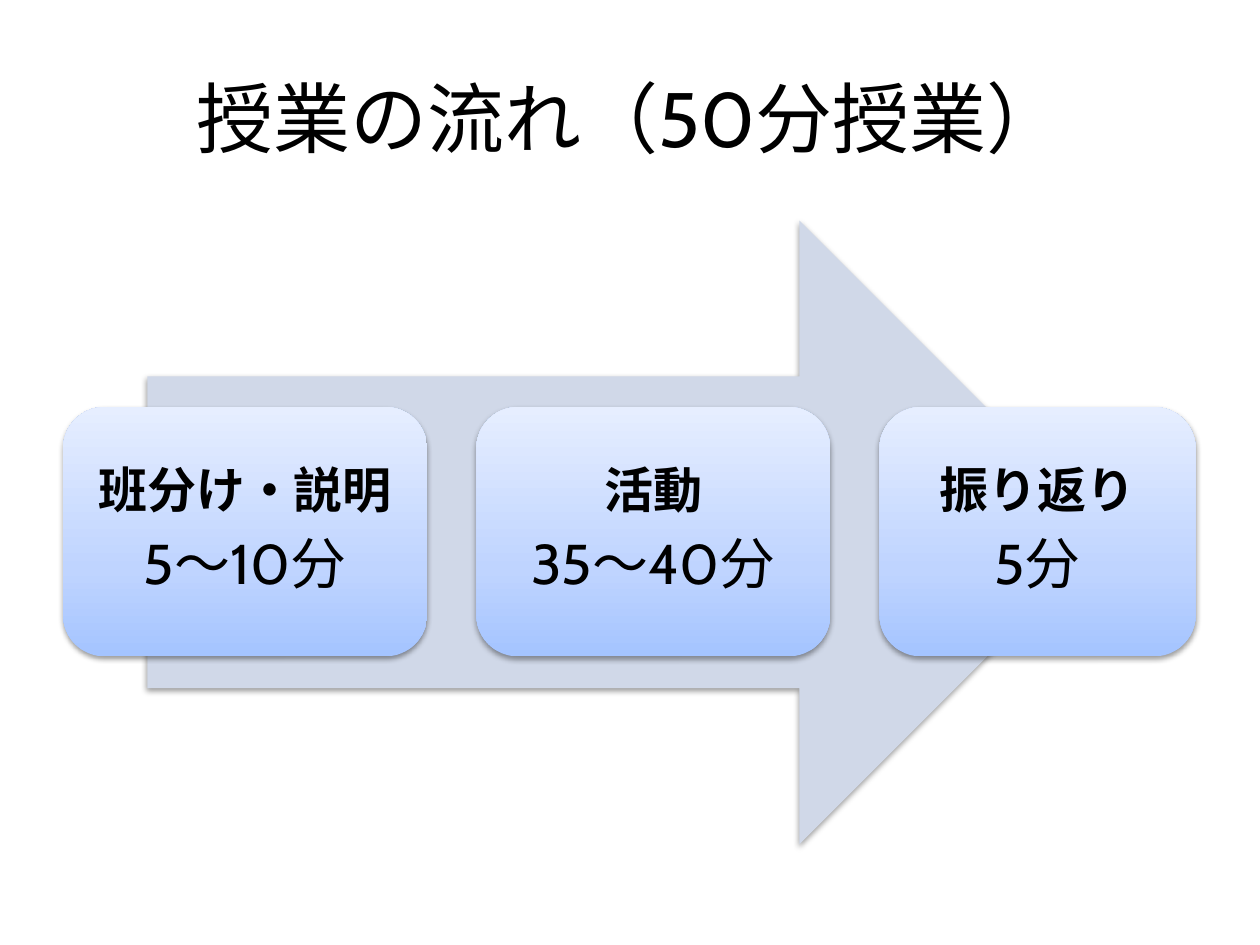
import copy

import lxml.etree
import pptx
import pptx.dml.color
import pptx.enum.shapes
import pptx.enum.text
import pptx.oxml.ns
import pptx.util
from pptx.util import Inches

BLACK = pptx.dml.color.RGBColor(0x00, 0x00, 0x00)
ARROW_BLUE = pptx.dml.color.RGBColor(0xD0, 0xD8, 0xE8)
GRADIENT = [
    (0, pptx.dml.color.RGBColor(0xA4, 0xC4, 0xFF)),
    (0.35, pptx.dml.color.RGBColor(0xBF, 0xD4, 0xFF)),
    (1, pptx.dml.color.RGBColor(0xE6, 0xEE, 0xFF)),
]
FONT = "Cabin"
qn = pptx.oxml.ns.qn

BOX_TOP, BOX_HEIGHT, BOX_GAP = 3.23, 1.98, 0.39
STEPS = [
    (2.89, "班分け・説明", "5～10分"),
    (2.81, "活動", "35～40分"),
    (2.51, "振り返り", "5分"),
]


def add_soft_shape(kind, left, top, width, height):
    """Add a shape without outline that casts a soft shadow downwards."""
    shape = slide.shapes.add_shape(
        kind, Inches(left), Inches(top), Inches(width), Inches(height))
    shape.line.fill.background()
    shape.shadow.inherit = False
    effects = shape._element.spPr.find(qn("a:effectLst"))
    shadow = lxml.etree.SubElement(
        effects, qn("a:outerShdw"), blurRad="40000", dist="20000",
        dir="5400000", rotWithShape="0")
    color = lxml.etree.SubElement(shadow, qn("a:srgbClr"), val="000000")
    lxml.etree.SubElement(color, qn("a:alpha"), val="38000")
    return shape


def format_step_paragraph(paragraph, text, size, bold):
    paragraph.text = text
    paragraph.alignment = pptx.enum.text.PP_ALIGN.CENTER
    paragraph.font.name = FONT
    paragraph.font.size = pptx.util.Pt(size)
    paragraph.font.bold = bold
    paragraph.font.color.rgb = BLACK
    paragraph.line_spacing = 0.9
    # Spacing relative to the text size is only available in XML.
    paragraph.space_after = pptx.util.Pt(0)
    spacing = paragraph._p.pPr.find(qn("a:spcAft"))
    spacing.remove(spacing[0])
    lxml.etree.SubElement(spacing, qn("a:spcPct"), val="35000")


presentation = pptx.Presentation()
presentation.slide_width = Inches(10)
presentation.slide_height = Inches(7.5)
slide = presentation.slides.add_slide(presentation.slide_layouts[5])

title = slide.shapes.title
title.left, title.top = Inches(0.5), Inches(0.3)
title.width, title.height = Inches(9), Inches(1.25)
title.text_frame.vertical_anchor = pptx.enum.text.MSO_ANCHOR.MIDDLE
paragraph = title.text_frame.paragraphs[0]
paragraph.text = "授業の流れ（50分授業）"
paragraph.alignment = pptx.enum.text.PP_ALIGN.CENTER
paragraph.font.name = FONT
paragraph.font.size = pptx.util.Pt(44)
paragraph.font.color.rgb = BLACK

arrow = add_soft_shape(
    pptx.enum.shapes.MSO_SHAPE.RIGHT_ARROW, 1.17, 1.75, 7.65, 4.95)
arrow.fill.solid()
arrow.fill.fore_color.rgb = ARROW_BLUE

left = 0.5
for width, name, duration in STEPS:
    box = add_soft_shape(
        pptx.enum.shapes.MSO_SHAPE.ROUNDED_RECTANGLE,
        left, BOX_TOP, width, BOX_HEIGHT)
    left += width + BOX_GAP

    box.fill.gradient()
    box.fill.gradient_angle = 90
    stop_list = box._element.spPr.find(qn("a:gradFill")).find(qn("a:gsLst"))
    stop_list.append(copy.deepcopy(stop_list[-1]))
    for stop, (position, color) in zip(box.fill.gradient_stops, GRADIENT):
        stop.position = position
        stop.color.rgb = color

    text_frame = box.text_frame
    text_frame.word_wrap = True
    text_frame.vertical_anchor = pptx.enum.text.MSO_ANCHOR.MIDDLE
    text_frame.margin_left = text_frame.margin_right = Inches(0.12)
    text_frame.margin_top = text_frame.margin_bottom = Inches(0.12)
    format_step_paragraph(text_frame.paragraphs[0], name, 28, True)
    format_step_paragraph(text_frame.add_paragraph(), duration, 32, False)

presentation.save("out.pptx")
